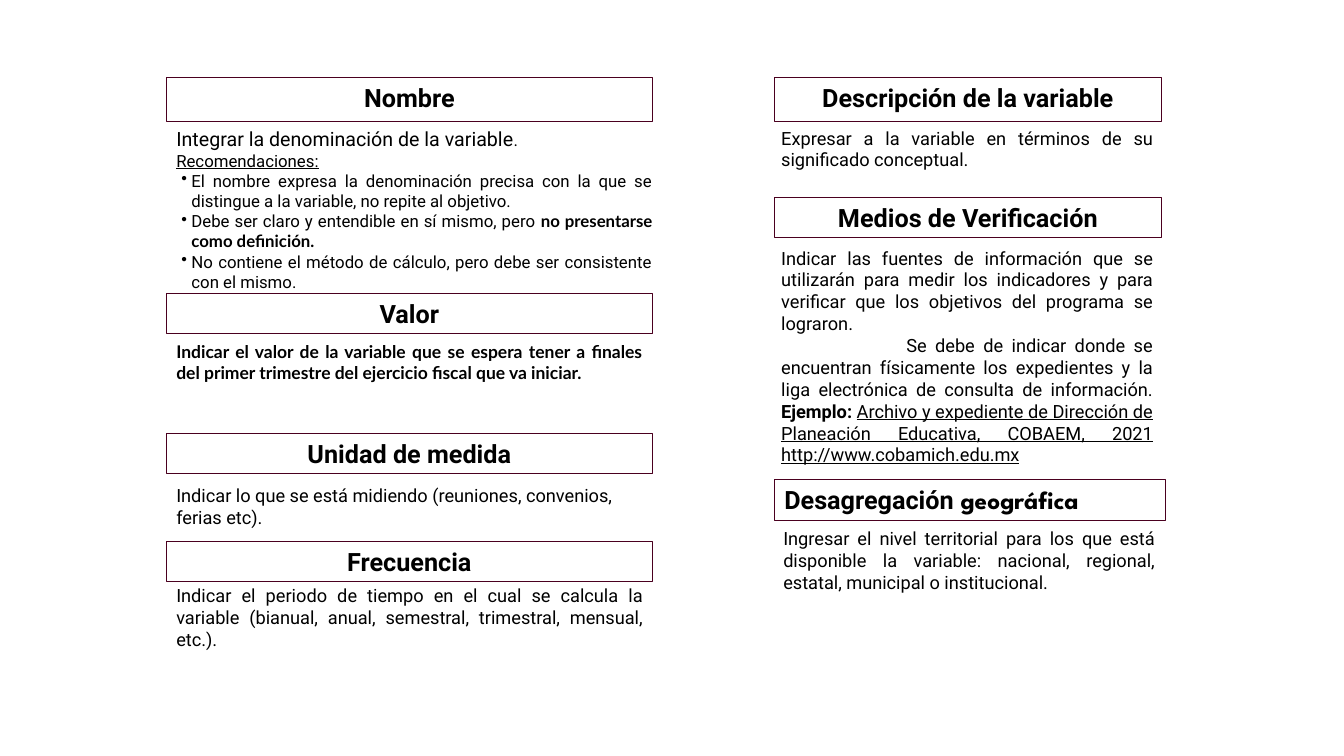
from dataclasses import dataclass

from lxml import etree
from pptx import Presentation
from pptx.dml.color import RGBColor
from pptx.enum.shapes import MSO_SHAPE
from pptx.enum.text import MSO_ANCHOR, PP_ALIGN
from pptx.oxml.ns import qn
from pptx.util import Inches, Pt

RECT = MSO_SHAPE.RECTANGLE
TOP = MSO_ANCHOR.TOP
LEFT, CENTER, JUSTIFY = PP_ALIGN.LEFT, PP_ALIGN.CENTER, PP_ALIGN.JUSTIFY


@dataclass(frozen=True)
class Theme:
    ink: RGBColor = RGBColor(0, 0, 0)
    edge: RGBColor = RGBColor(0x4A, 0x00, 0x1F)
    font: str = "Roboto"
    strong: str = "Lato"
    accent: str = "League Spartan"
    head: float = 18
    lead: float = 14
    body: float = 13
    value: float = 12.5
    small: float = 12


THEME = Theme()


def style(par, size, align, font=THEME.font, bold=False):
    par.alignment = align
    par.font.size = Pt(size)
    par.font.name = font
    par.font.bold = bold
    par.font.color.rgb = THEME.ink


def add_run(par, text, font=None, bold=None, line=None, size=None):
    run = par.add_run()
    run.text = text
    run.font.name = font
    run.font.bold = bold
    run.font.underline = line
    if size:
        run.font.size = Pt(size)


def indent(par, margin, first, bullet=None):
    """Set the left margin and first-line offset, with an optional bullet."""
    props = par._p.get_or_add_pPr()
    props.set("marL", str(Inches(margin)))
    props.set("indent", str(Inches(first)))
    if bullet:
        etree.SubElement(props, qn("a:buChar")).set("char", bullet)


def add_head(slide, box, text, align=CENTER):
    """Draw an outlined heading and return its paragraph."""
    shape = slide.shapes.add_shape(RECT, *map(Inches, box))
    shape.shadow.inherit = False
    shape.fill.background()
    shape.line.color.rgb = THEME.edge
    shape.line.width = Pt(0.75)
    shape.text_frame.word_wrap = True
    shape.text_frame.vertical_anchor = TOP
    par = shape.text_frame.paragraphs[0]
    style(par, THEME.head, align, bold=True)
    add_run(par, text)
    return par


def add_frame(slide, box):
    frame = slide.shapes.add_textbox(*map(Inches, box)).text_frame
    frame.word_wrap = True
    return frame


def add_body(slide, box, text, size=THEME.body, align=JUSTIFY, **look):
    """Add a one-paragraph text box and return its frame."""
    frame = add_frame(slide, box)
    par = frame.paragraphs[0]
    style(par, size, align, **look)
    add_run(par, text)
    return frame


def add_name(slide, box):
    frame = add_frame(slide, box)
    par = frame.paragraphs[0]
    style(par, THEME.small, JUSTIFY)
    add_run(par, "Integrar la denominación de la variable", size=THEME.lead)
    add_run(par, ".")
    par = frame.add_paragraph()
    style(par, THEME.small, JUSTIFY)
    add_run(par, "Recomendaciones:", line=True)
    tips = (
        ("El nombre expresa la denominación precisa con la que se distingue "
         "a la variable, no repite al objetivo.", ""),
        ("Debe ser claro y entendible en sí mismo, pero ",
         "no presentarse como definición."),
        ("No contiene el método de cálculo, pero debe ser consistente "
         "con el mismo.", ""),
    )
    for plain, strong in tips:
        par = frame.add_paragraph()
        indent(par, 0.15, -0.1, "•")
        style(par, THEME.small, JUSTIFY)
        add_run(par, plain)
        if strong:
            add_run(par, strong, THEME.strong, True)


def add_means(slide, box):
    frame = add_body(
        slide, box,
        "Indicar las fuentes de información que se utilizarán para medir los "
        "indicadores y para verificar que los objetivos del programa se lograron.")
    par = frame.add_paragraph()
    indent(par, 0, 1.24)
    style(par, THEME.body, JUSTIFY)
    add_run(par, "Se debe de indicar donde se encuentran físicamente los "
                 "expedientes y la liga electrónica de consulta de información. ")
    add_run(par, "Ejemplo: ", bold=True)
    add_run(par, "Archivo y expediente de Dirección de Planeación Educativa, "
                 "COBAEM, 2021 http://www.cobamich.edu.mx", line=True)


def add_left(slide, x, y, w):
    """Fill the left column from its top-left corner and width."""
    add_head(slide, (x, y, w, 0.44), "Nombre")
    add_name(slide, (x, y + 0.44, w + 0.1, 1.99))
    add_head(slide, (x, y + 2.14, w, 0.4), "Valor")
    add_body(slide, (x, y + 2.56, w, 0.73),
             "Indicar el valor de la variable que se espera tener a finales del "
             "primer trimestre del ejercicio fiscal que va iniciar.",
             THEME.value, font=THEME.strong, bold=True)
    add_head(slide, (x, y + 3.53, w, 0.4), "Unidad de medida")
    add_body(slide, (x, y + 3.99, w, 0.54),
             "Indicar lo que se está midiendo (reuniones, convenios, ferias etc).",
             align=LEFT)
    add_head(slide, (x, y + 4.6, w, 0.4), "Frecuencia")
    add_body(slide, (x, y + 4.98, w, 0.76),
             "Indicar el periodo de tiempo en el cual se calcula la variable "
             "(bianual, anual, semestral, trimestral, mensual, etc.).")


def add_right(slide, x, y, w):
    """Fill the right column from its top-left corner and width."""
    text_x, text_w = x - 0.03, w + 0.04
    add_head(slide, (x, y, w, 0.44), "Descripción de la variable")
    add_body(slide, (text_x, y + 0.44, text_w, 0.54),
             "Expresar a la variable en términos de su significado conceptual.")
    add_head(slide, (x, y + 1.19, w, 0.4), "Medios de Verificación")
    add_means(slide, (text_x, y + 1.63, text_w, 2.29))
    par = add_head(slide, (x, y + 3.99, text_w, 0.4), "Desagregación", LEFT)
    add_run(par, " geográfica", THEME.accent)
    add_body(slide, (x - 0.01, y + 4.41, text_w, 0.76),
             "Ingresar el nivel territorial para los que está disponible la "
             "variable: nacional, regional, estatal, municipal o institucional.")


def main():
    deck = Presentation()
    deck.slide_width, deck.slide_height = Inches(13.33), Inches(7.5)
    slide = deck.slides.add_slide(deck.slide_layouts[6])
    add_left(slide, 1.65, 0.77, 4.82)
    add_right(slide, 7.68, 0.77, 3.84)
    deck.save("out.pptx")


if __name__ == "__main__":
    main()
